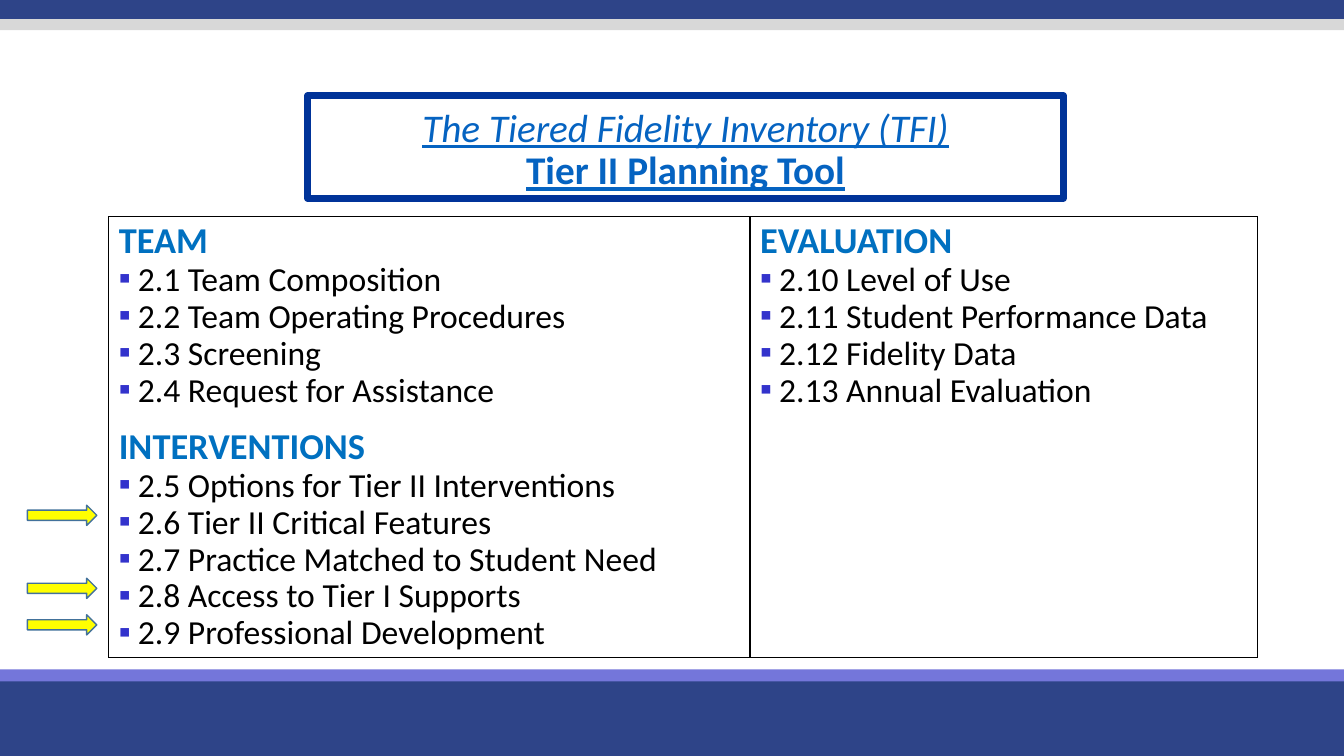
from dataclasses import dataclass

from lxml import etree
from pptx import Presentation
from pptx.dml.color import RGBColor
from pptx.enum.shapes import MSO_SHAPE
from pptx.enum.text import MSO_ANCHOR, MSO_AUTO_SIZE, PP_ALIGN
from pptx.oxml.ns import qn
from pptx.util import Cm, Pt

RECTANGLE = MSO_SHAPE.RECTANGLE
RIGHT_ARROW = MSO_SHAPE.RIGHT_ARROW
BOTTOM = MSO_ANCHOR.BOTTOM
CENTER = PP_ALIGN.CENTER
NO_AUTOFIT = MSO_AUTO_SIZE.NONE


@dataclass(frozen=True)
class Theme:
    font: str = "Calibri"
    navy: str = "2E4488"
    lilac: str = "7476DA"
    grey: str = "D8D8D8"
    frame: str = "003399"
    link: str = "0563C1"
    heading: str = "0070C0"
    bullet: str = "3333CC"
    yellow: str = "FFFF00"
    arrow_line: str = "42719B"
    black: str = "000000"
    white: str = "FFFFFF"
    title_size: int = 28
    heading_size: int = 26
    item_size: int = 24
    line_spacing: float = 0.9


THEME = Theme()


def add_span(para, text, size, color, bold=False):
    span = para.add_run()
    span.text = text
    span.font.name = THEME.font
    span.font.size = Pt(size)
    span.font.bold = bold
    span.font.color.rgb = RGBColor.from_string(color)
    return span


def add_filled_shape(kind, left, top, width, height, color):
    shape = page.shapes.add_shape(kind, Cm(left), Cm(top), Cm(width), Cm(height))
    shape.shadow.inherit = False
    shape.fill.solid()
    shape.fill.fore_color.rgb = RGBColor.from_string(color)
    shape.line.fill.background()
    return shape


deck = Presentation()
deck.slide_width = Cm(33.87)
deck.slide_height = Cm(19.05)
page = deck.slides.add_slide(deck.slide_layouts[5])

# Bands across the top and bottom
for top, height, color in [
    (17.02, 2.03, THEME.navy),
    (16.87, 0.3, THEME.lilac),
    (0, 0.48, THEME.navy),
    (0.48, 0.28, THEME.grey),
]:
    add_filled_shape(RECTANGLE, 0, top, 33.87, height, color)

# Framed title
title = page.shapes.title
title.left, title.top, title.width, title.height = Cm(7.75), Cm(2.41), Cm(19.05), Cm(2.59)
title.fill.solid()
title.fill.fore_color.rgb = RGBColor.from_string(THEME.white)
title.line.color.rgb = RGBColor.from_string(THEME.frame)
title.line.width = Pt(4.5)
title.text_frame.auto_size = NO_AUTOFIT
title.text_frame.vertical_anchor = BOTTOM
para = title.text_frame.paragraphs[0]
para.alignment = CENTER
para.line_spacing = THEME.line_spacing
inventory = add_span(para, "The Tiered Fidelity Inventory (TFI)", THEME.title_size, THEME.link)
inventory.font.italic = True
inventory.font.underline = True
para.add_line_break()
tool = add_span(para, "Tier II Planning Tool", THEME.title_size, THEME.link, bold=True)
tool.font.underline = True

# Planning table: each column holds headed lists
columns = [
    (16.16, [
        ("TEAM", [
            "2.1 Team Composition",
            "2.2 Team Operating Procedures",
            "2.3 Screening",
            "2.4 Request for Assistance",
        ]),
        ("INTERVENTIONS", [
            "2.5 Options for Tier II Interventions",
            "2.6 Tier II Critical Features",
            "2.7 Practice Matched to Student Need",
            "2.8 Access to Tier I Supports",
            "2.9 Professional Development",
        ]),
    ]),
    (12.78, [
        ("EVALUATION", [
            "2.10 Level of Use",
            "2.11 Student Performance Data",
            "2.12 Fidelity Data",
            "2.13 Annual Evaluation",
        ]),
    ]),
]
table_width = sum(width for width, sections in columns)
table = page.shapes.add_table(
    1, len(columns), Cm(2.74), Cm(5.46), Cm(table_width), Cm(10.82)
).table
table.first_row = False
table.horz_banding = False

for index, (width, sections) in enumerate(columns):
    table.columns[index].width = Cm(width)
    cell = table.cell(0, index)
    cell.fill.solid()
    cell.fill.fore_color.rgb = RGBColor.from_string(THEME.white)
    properties = cell.fill._xPr
    for position, side in enumerate(["lnL", "lnR", "lnT", "lnB"]):
        border = etree.Element(qn(f"a:{side}"), w=str(Pt(1)))
        border_fill = etree.SubElement(border, qn("a:solidFill"))
        etree.SubElement(border_fill, qn("a:srgbClr"), val=THEME.black)
        properties.insert(position, border)

    para = cell.text_frame.paragraphs[0]
    for section, (heading, items) in enumerate(sections):
        if section > 0:
            para = cell.text_frame.add_paragraph()
            para.space_before = Pt(13)
        para.line_spacing = THEME.line_spacing
        add_span(para, heading, THEME.heading_size, THEME.heading, bold=True)
        for item in items:
            para = cell.text_frame.add_paragraph()
            para.line_spacing = THEME.line_spacing
            bullet = para._p.get_or_add_pPr()
            bullet.set("marL", str(Cm(0.48)))
            bullet.set("indent", str(-Cm(0.48)))
            bullet_color = etree.SubElement(bullet, qn("a:buClr"))
            etree.SubElement(bullet_color, qn("a:srgbClr"), val=THEME.bullet)
            etree.SubElement(bullet, qn("a:buFont"), typeface=THEME.font)
            etree.SubElement(bullet, qn("a:buChar"), char="▪")
            add_span(para, item, THEME.item_size, THEME.black)

# Arrows at items 2.6, 2.8 and 2.9, counted in lines from 2.6
for line in (0, 2, 3):
    arrow = add_filled_shape(RIGHT_ARROW, 0.69, 12.73 + 0.92 * line, 1.75, 0.51, THEME.yellow)
    arrow.line.color.rgb = RGBColor.from_string(THEME.arrow_line)
    arrow.line.width = Pt(1)

deck.save("out.pptx")
